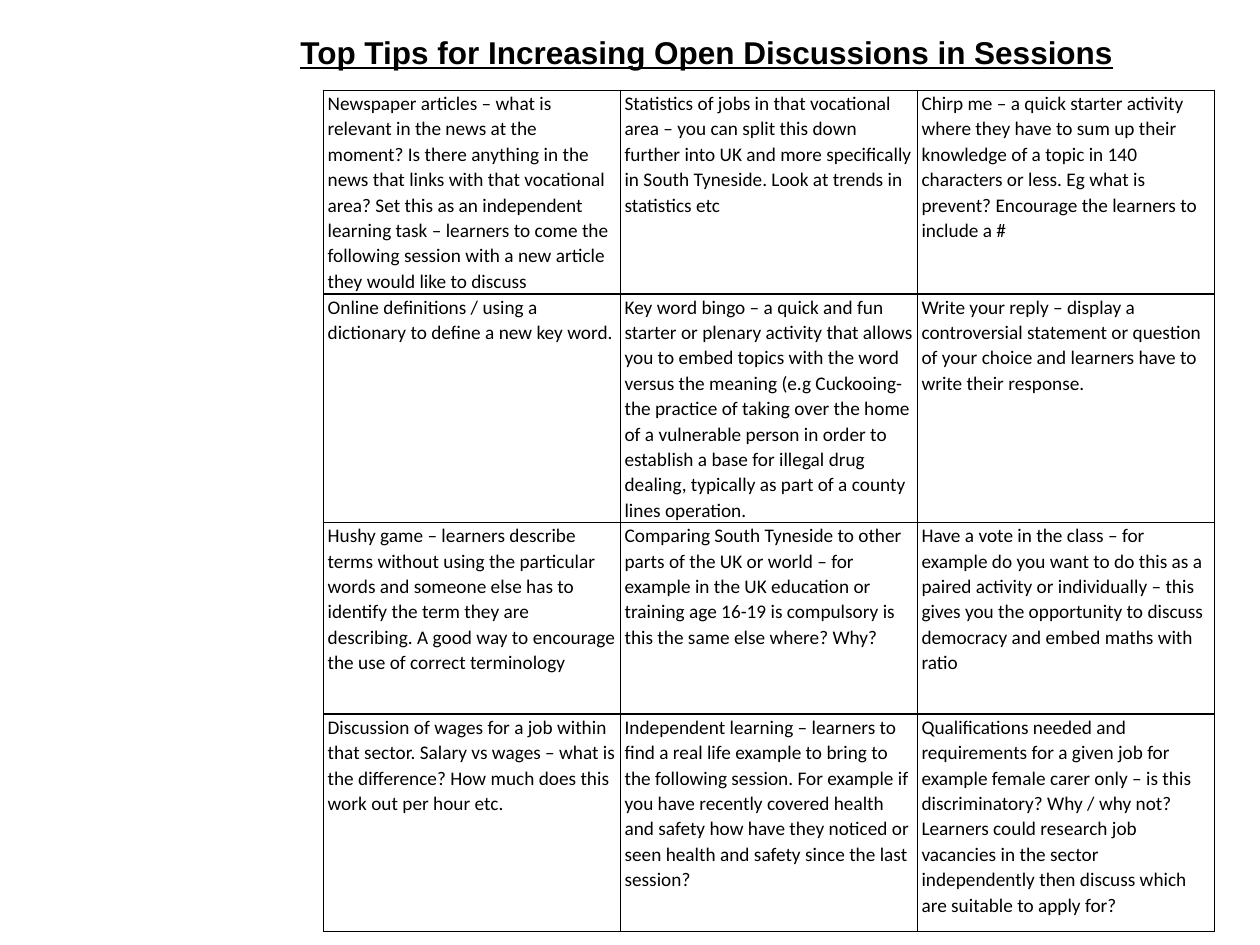
from dataclasses import dataclass

from lxml import etree
from pptx import Presentation
from pptx.dml.color import RGBColor
from pptx.enum import text as t
from pptx.oxml import ns
from pptx.util import Pt


@dataclass(frozen=True)
class Theme:
    ink: str = "000000"
    title_font: str = "Arial"
    body_font: str = "Calibri"
    title_size: float = 18
    body_size: float = 11
    line_spacing: float = 1.07
    border_width: float = 1


@dataclass(frozen=True)
class TipRow:
    height: float
    tips: tuple[str, str, str]


THEME = Theme()
TABLE_LEFT, TABLE_TOP, COLUMN_WIDTH = 185, 51.6, 169.7
CELL_INSET = 2.25

TIP_ROWS = (
    TipRow(116.4, (
        "Newspaper articles – what is relevant in the news at the moment? Is there anything in the "
        "news that links with that vocational area? Set this as an independent learning task – "
        "learners to come the following session with a new article they would like to discuss",
        "Statistics of jobs in that vocational area – you can split this down further into UK and "
        "more specifically in South Tyneside. Look at trends in statistics etc",
        "Chirp me – a quick starter activity where they have to sum up their knowledge of a topic "
        "in 140 characters or less. Eg what is prevent? Encourage the learners to include a #",
    )),
    TipRow(130.7, (
        "Online definitions / using a dictionary to define a new key word.",
        "Key word bingo – a quick and fun starter or plenary activity that allows you to embed "
        "topics with the word versus the meaning (e.g Cuckooing- the practice of taking over the "
        "home of a vulnerable person in order to establish a base for illegal drug dealing, "
        "typically as part of a county lines operation.",
        "Write your reply – display a controversial statement or question of your choice and "
        "learners have to write their response.",
    )),
    TipRow(109.4, (
        "Hushy game – learners describe terms without using the particular words and someone else "
        "has to identify the term they are describing. A good way to encourage the use of correct "
        "terminology",
        "Comparing South Tyneside to other parts of the UK or world – for example in the UK "
        "education or training age 16-19 is compulsory is this the same else where? Why?",
        "Have a vote in the class – for example do you want to do this as a paired activity or "
        "individually – this gives you the opportunity to discuss democracy and embed maths with "
        "ratio",
    )),
    TipRow(124.3, (
        "Discussion of wages for a job within that sector. Salary vs wages – what is the "
        "difference? How much does this work out per hour etc.",
        "Independent learning – learners to find a real life example to bring to the following "
        "session. For example if you have recently covered health and safety how have they noticed "
        "or seen health and safety since the last session?",
        "Qualifications needed and requirements for a given job for example female carer only – is "
        "this discriminatory? Why / why not? Learners could research job vacancies in the sector "
        "independently then discuss which are suitable to apply for?",
    )),
)


def write_text(frame, content: str, *, font: str, size: float, bold: bool = False,
               underline: bool = False, align=t.PP_ALIGN.LEFT) -> None:
    frame.word_wrap = True
    paragraph = frame.paragraphs[0]
    paragraph.alignment = align
    paragraph.line_spacing = THEME.line_spacing
    run = paragraph.add_run()
    run.text = content
    run.font.name = font
    run.font.size = Pt(size)
    run.font.bold = bold
    run.font.underline = underline
    run.font.color.rgb = RGBColor.from_string(THEME.ink)


def set_borders(cell) -> None:
    properties = cell._tc.get_or_add_tcPr()
    for index, side in enumerate(("lnL", "lnR", "lnT", "lnB")):
        line = etree.Element(ns.qn(f"a:{side}"), w=str(Pt(THEME.border_width)))
        fill = etree.SubElement(line, ns.qn("a:solidFill"))
        etree.SubElement(fill, ns.qn("a:srgbClr"), val=THEME.ink)
        properties.insert(index, line)


def add_title(slide, content: str) -> None:
    box = slide.shapes.add_textbox(Pt(156.2), Pt(13.7), Pt(495.4), Pt(29.5))
    write_text(box.text_frame, content, font=THEME.title_font, size=THEME.title_size,
               bold=True, underline=True, align=t.PP_ALIGN.CENTER)


def add_tips_table(slide, tip_rows: tuple[TipRow, ...]) -> None:
    column_count = len(tip_rows[0].tips)
    table = slide.shapes.add_table(
        len(tip_rows), column_count, Pt(TABLE_LEFT), Pt(TABLE_TOP),
        Pt(COLUMN_WIDTH * column_count), Pt(sum(row.height for row in tip_rows))).table
    table.first_row = table.horz_banding = False
    for column in table.columns:
        column.width = Pt(COLUMN_WIDTH)
    for row, tip_row in zip(table.rows, tip_rows):
        row.height = Pt(tip_row.height)
        for cell, tip in zip(row.cells, tip_row.tips):
            cell.margin_left = cell.margin_right = Pt(CELL_INSET)
            cell.margin_top = cell.margin_bottom = Pt(0)
            cell.fill.background()
            set_borders(cell)
            write_text(cell.text_frame, tip, font=THEME.body_font, size=THEME.body_size)


def main() -> None:
    presentation = Presentation()
    presentation.slide_width, presentation.slide_height = Pt(720), Pt(540)
    slide = presentation.slides.add_slide(presentation.slide_layouts[6])
    add_tips_table(slide, TIP_ROWS)
    add_title(slide, "Top Tips for Increasing Open Discussions in Sessions")
    presentation.save("out.pptx")


if __name__ == "__main__":
    main()
